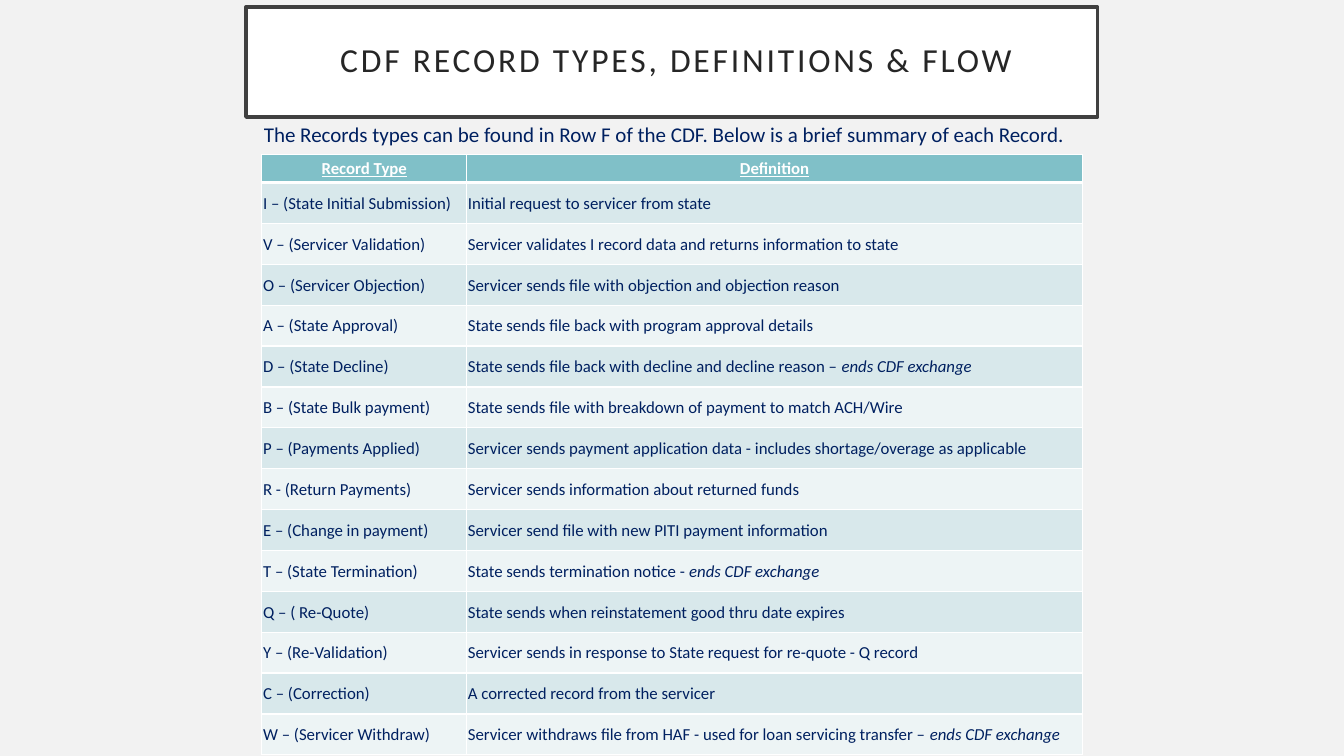
from lxml.etree import SubElement
from pptx import Presentation
from pptx.dml.color import RGBColor
from pptx.enum.shapes import MSO_SHAPE
from pptx.enum.text import MSO_ANCHOR, PP_ALIGN
from pptx.oxml.ns import qn
from pptx.util import Cm, Pt

COLORS = {
    "background": "F2F2F2", "white": "FFFFFF", "frame": "404040",
    "title": "262626", "navy": "002060", "header": "80C0C8",
    "odd": "D8E8EB", "even": "EDF4F5",
}
ENDS = "ends CDF exchange"

# Record type, definition, optional closing words in italics
RECORDS = [
    ("I – (State Initial Submission)", "Initial request to servicer from state"),
    ("V – (Servicer Validation)", "Servicer validates I record data and returns information to state"),
    ("O – (Servicer Objection)", "Servicer sends file with objection and objection reason"),
    ("A – (State Approval)", "State sends file back with program approval details"),
    ("D – (State Decline)", "State sends file back with decline and decline reason – ", ENDS),
    ("B – (State Bulk payment)", "State sends file with breakdown of payment to match ACH/Wire"),
    ("P – (Payments Applied)",
     "Servicer sends payment application data - includes shortage/overage as applicable"),
    ("R - (Return Payments)", "Servicer sends information about returned funds"),
    ("E – (Change in payment)", "Servicer send file with new PITI payment information"),
    ("T – (State Termination)", "State sends termination notice - ", ENDS),
    ("Q – ( Re-Quote)", "State sends when reinstatement good thru date expires"),
    ("Y – (Re-Validation)", "Servicer sends in response to State request for re-quote - Q record"),
    ("C – (Correction)", "A corrected record from the servicer"),
    ("W – (Servicer Withdraw)",
     "Servicer withdraws file from HAF - used for loan servicing transfer – ", ENDS),
]


def rgb(name):
    return RGBColor.from_string(COLORS[name])


class SlideBuilder:
    font_name = "Calibri"

    def __init__(self, slide):
        self.slide = slide
        slide.background.fill.solid()
        slide.background.fill.fore_color.rgb = rgb("background")

    def add_run(self, paragraph, text, size, color, spacing=None, **style):
        run = paragraph.add_run()
        run.text = text
        run.font.name = self.font_name
        run.font.size = Pt(size)
        run.font.color.rgb = rgb(color)
        for name, value in style.items():
            setattr(run.font, name, value)
        if spacing:
            run.font._element.set("spc", str(spacing * 100))

    def add_title(self, text, left, top, width, height):
        shape = self.slide.shapes.add_shape(
            MSO_SHAPE.RECTANGLE, Cm(left), Cm(top), Cm(width), Cm(height))
        shape.shadow.inherit = False
        shape.fill.solid()
        shape.fill.fore_color.rgb = rgb("white")
        shape.line.color.rgb = rgb("frame")
        shape.line.width = Pt(2.5)
        frame = shape.text_frame
        frame.word_wrap = True
        frame.vertical_anchor = MSO_ANCHOR.MIDDLE
        frame.margin_left = frame.margin_right = Cm(0.5)
        frame.margin_top = frame.margin_bottom = Cm(0.5)
        paragraph = frame.paragraphs[0]
        paragraph.alignment = PP_ALIGN.CENTER
        paragraph.line_spacing = 0.9
        self.add_run(paragraph, " ", 20, "title", spacing=2)
        self.add_run(paragraph, text, 24, "title", spacing=2)

    def add_text(self, text, left, top, width, height):
        shape = self.slide.shapes.add_textbox(Cm(left), Cm(top), Cm(width), Cm(height))
        shape.text_frame.word_wrap = True
        self.add_run(shape.text_frame.paragraphs[0], text, 15, "navy")

    def style_cell(self, cell, fill, bottom_width=1):
        cell.vertical_anchor = MSO_ANCHOR.MIDDLE
        cell.margin_left = cell.margin_right = cell.margin_top = Cm(0.03)
        cell.margin_bottom = 0
        properties = cell._tc.get_or_add_tcPr()
        for side, width in (("L", 1), ("R", 1), ("T", 1), ("B", bottom_width)):
            line = SubElement(properties, qn(f"a:ln{side}"), w=str(Pt(width)))
            solid = SubElement(line, qn("a:solidFill"))
            SubElement(solid, qn("a:srgbClr"), val=COLORS["white"])
        cell.fill.solid()
        cell.fill.fore_color.rgb = rgb(fill)

    def add_table(self, headings, records, left, top, widths, header_height, row_height):
        table = self.slide.shapes.add_table(
            len(records) + 1, len(widths), Cm(left), Cm(top), Cm(sum(widths)),
            Cm(header_height + row_height * len(records))).table
        for column, width in zip(table.columns, widths):
            column.width = Cm(width)
        for index, row in enumerate(table.rows):
            row.height = Cm(row_height if index else header_height)

        # Header row
        for index, heading in enumerate(headings):
            cell = table.cell(0, index)
            self.style_cell(cell, "header", bottom_width=3)
            paragraph = cell.text_frame.paragraphs[0]
            paragraph.alignment = PP_ALIGN.CENTER
            self.add_run(paragraph, heading, 12, "white", bold=True, underline=True)

        # Banded record rows
        for index, (record_type, definition, *ending) in enumerate(records, 1):
            for column, text in enumerate((record_type, definition)):
                cell = table.cell(index, column)
                self.style_cell(cell, "odd" if index % 2 else "even",)
                self.add_run(cell.text_frame.paragraphs[0], text, 12, "navy")
            for text in ending:
                self.add_run(cell.text_frame.paragraphs[0], text, 12, "navy", italic=True)


def main():
    presentation = Presentation()
    presentation.slide_width = Cm(33.87)
    presentation.slide_height = Cm(19.05)
    builder = SlideBuilder(presentation.slides.add_slide(presentation.slide_layouts[6]))

    # Title, record table and introduction
    builder.add_title("CDF RECORD TYPES, DEFINITIONS & FLOW", 6.2, 0.18, 21.46, 2.77)
    builder.add_table(("Record Type", "Definition"), RECORDS, 6.6, 3.89,
                      (5.16, 15.52), 0.71, 1.03)
    builder.add_text("The Records types can be found in Row F of the CDF. "
                     "Below is a brief summary of each Record.", 6.4, 2.95, 21.03, 0.89)
    presentation.save("out.pptx")


if __name__ == "__main__":
    main()
